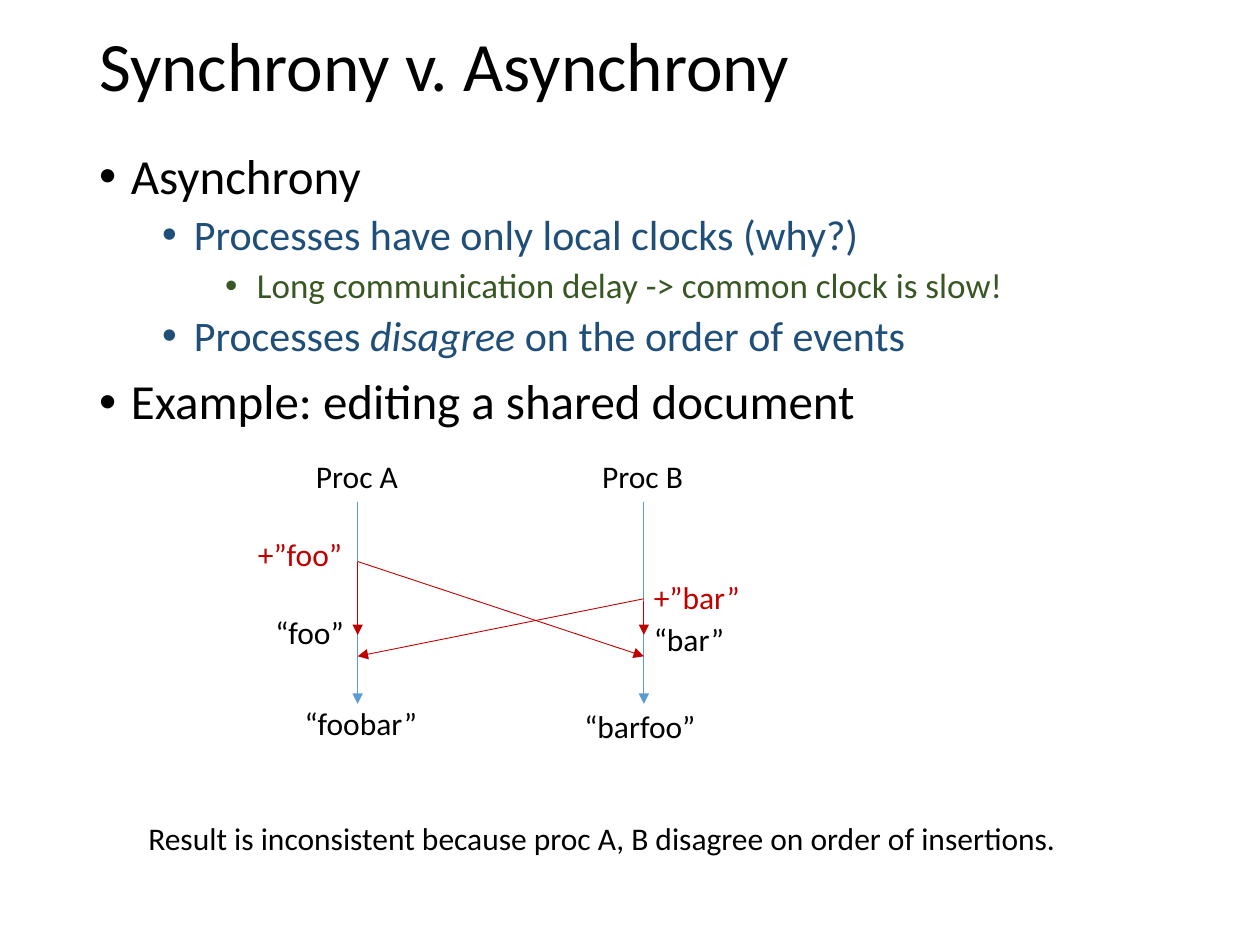
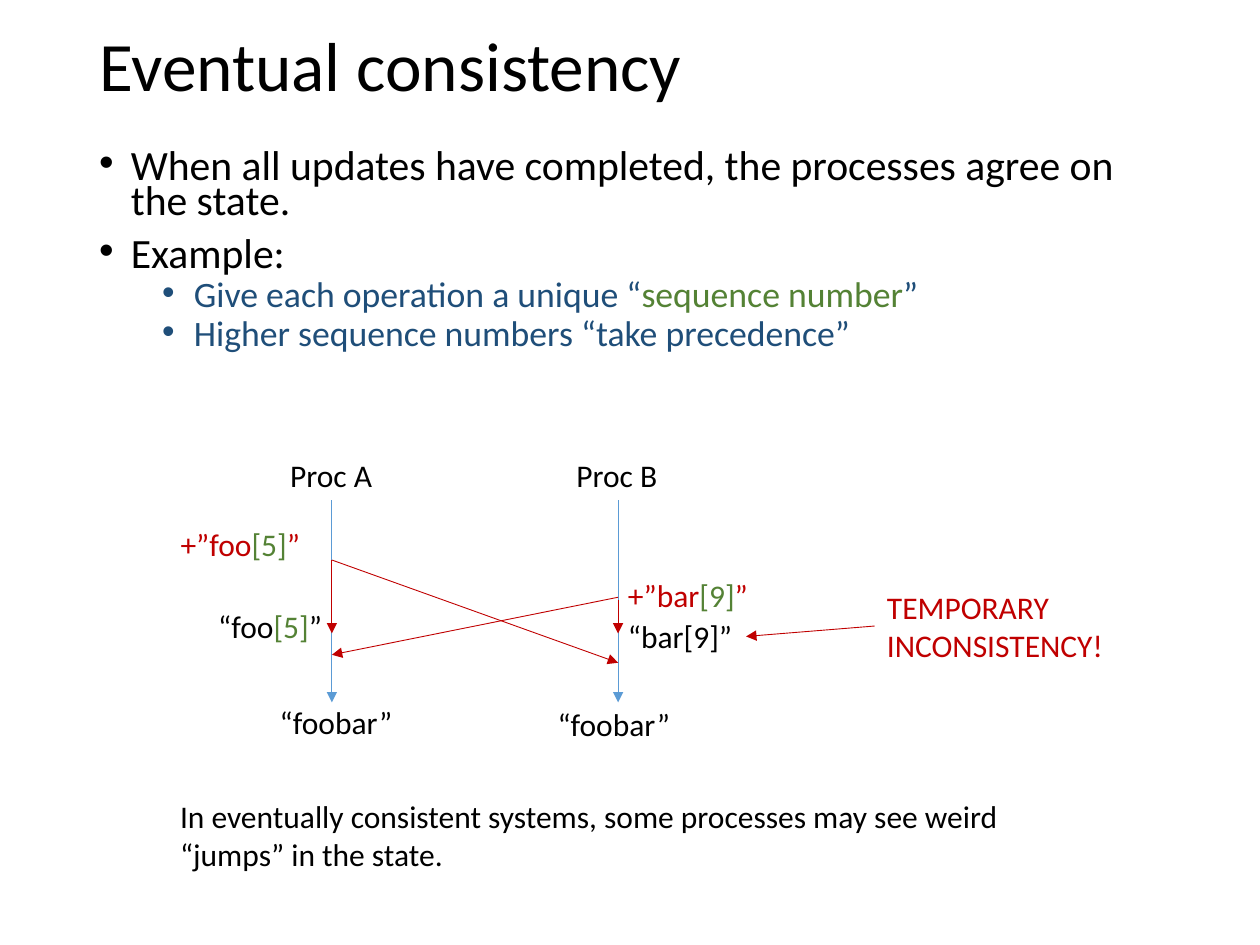
"""Builds two slides on asynchrony and eventual consistency."""
from dataclasses import dataclass
from typing import NamedTuple

from lxml import etree
from pptx import Presentation
from pptx.dml.color import RGBColor
from pptx.enum.shapes import MSO_CONNECTOR
from pptx.enum.text import MSO_ANCHOR, MSO_AUTO_SIZE
from pptx.oxml.ns import qn
from pptx.slide import Slide
from pptx.text.text import TextFrame, _Paragraph
from pptx.util import Cm, Pt

STRAIGHT = MSO_CONNECTOR.STRAIGHT
MIDDLE, TOP = MSO_ANCHOR.MIDDLE, MSO_ANCHOR.TOP
GROW, FIXED = MSO_AUTO_SIZE.SHAPE_TO_FIT_TEXT, MSO_AUTO_SIZE.NONE


@dataclass(frozen=True)
class Theme:
    font: str = "Calibri"
    ink: RGBColor = RGBColor(0x00, 0x00, 0x00)
    blue: RGBColor = RGBColor(0x1F, 0x4E, 0x79)
    dark_green: RGBColor = RGBColor(0x38, 0x57, 0x23)
    green: RGBColor = RGBColor(0x54, 0x82, 0x35)
    red: RGBColor = RGBColor(0xC0, 0x00, 0x00)
    lifeline: RGBColor = RGBColor(0x5B, 0x9B, 0xD5)
    title_size: float = 39.6
    label_size: float = 18
    bullet_sizes: tuple[float, ...] = (28, 24, 20)
    line_width: float = 0.5


THEME = Theme()
LEVEL_COLORS = (THEME.ink, THEME.blue, THEME.dark_green)
LEFT, TEXT_WIDTH = 1.75, 21.9
PROCESS_GAP = 5.77
LIFELINE_LENGTH = 4.08
FOO_SENT, BAR_SENT, LOCAL_DONE, BAR_ARRIVES = 1.21, 1.96, 2.69, 3.12
LABEL_HEIGHT = 1.02


class Run(NamedTuple):
    text: str
    color: RGBColor | None = None
    italic: bool = False


class Bullet(NamedTuple):
    level: int
    runs: list[Run]


class Box(NamedTuple):
    left: float
    top: float
    width: float
    height: float = LABEL_HEIGHT


class Label(NamedTuple):
    lines: list[list[Run]]
    box: Box
    color: RGBColor = THEME.ink


class Arrow(NamedTuple):
    start: tuple[float, float]
    end: tuple[float, float]
    color: RGBColor = THEME.red


def add_frame(slide: Slide, box: Box, **formats: object) -> TextFrame:
    """Add a text box and apply the frame formats."""
    frame = slide.shapes.add_textbox(*map(Cm, box)).text_frame
    for name, value in formats.items():
        setattr(frame, name, value)
    return frame


def write_runs(paragraph: _Paragraph, runs: list[Run], size: float, color: RGBColor) -> None:
    """Write runs, using the given colour where a run has none."""
    for part in runs:
        run = paragraph.add_run()
        run.text = part.text
        formats = {"name": THEME.font, "size": Pt(size), "italic": part.italic}
        for name, value in formats.items():
            setattr(run.font, name, value)
        run.font.color.rgb = part.color or color


def next_paragraph(frame: TextFrame, index: int) -> _Paragraph:
    """Return the first paragraph or append another."""
    return frame.add_paragraph() if index else frame.paragraphs[0]


def add_title(slide: Slide, title: str) -> None:
    """Add the slide title."""
    frame = add_frame(slide, Box(LEFT, 0.46, TEXT_WIDTH, 1.85),
                      word_wrap=True, auto_size=FIXED, vertical_anchor=MIDDLE)
    paragraph = frame.paragraphs[0]
    paragraph.line_spacing = 0.9
    write_runs(paragraph, [Run(title)], THEME.title_size, THEME.ink)


def add_bullets(slide: Slide, bullets: list[Bullet], height: float,
                scale: float, spacing: float) -> None:
    """Add the nested bullet list."""
    frame = add_frame(slide, Box(LEFT, 2.95, TEXT_WIDTH, height),
                      word_wrap=True, auto_size=FIXED, vertical_anchor=TOP)
    for index, (level, runs) in enumerate(bullets):
        paragraph = next_paragraph(frame, index)
        formats = {"level": level, "line_spacing": spacing,
                   "space_before": Pt(5 if level else 10)}
        for name, value in formats.items():
            setattr(paragraph, name, value)
        properties = paragraph._p.get_or_add_pPr()
        properties.set("marL", str(Cm(0.64 + 1.27 * level)))
        properties.set("indent", str(-Cm(0.64)))
        etree.SubElement(properties, qn("a:buFont"), typeface="Arial")
        etree.SubElement(properties, qn("a:buChar"), char="•")
        size = round(THEME.bullet_sizes[level] * scale, 1)
        write_runs(paragraph, runs, size, LEVEL_COLORS[level])


def add_label(slide: Slide, label: Label, wrap: bool = False) -> None:
    """Add a label, one paragraph for each line."""
    frame = add_frame(slide, label.box, word_wrap=wrap, auto_size=GROW)
    for index, runs in enumerate(label.lines):
        write_runs(next_paragraph(frame, index), runs, THEME.label_size, label.color)


def add_arrow(slide: Slide, arrow: Arrow) -> None:
    """Add a thin line with a triangle at its end."""
    line = slide.shapes.add_connector(STRAIGHT, *map(Cm, (*arrow.start, *arrow.end)))
    line.line.color.rgb = arrow.color
    line.line.width = Pt(THEME.line_width)
    etree.SubElement(line.line._get_or_add_ln(), qn("a:tailEnd"), type="triangle")
    etree.SubElement(line._element.spPr, qn("a:effectLst"))


def add_exchange(slide: Slide, left: float, top: float, foo_arrives: float,
                 a_labels: list[Label], b_labels: list[Label]) -> None:
    """Draw two process lifelines, their messages and their labels."""
    a, b = left, left + PROCESS_GAP
    for x, name, labels in ((a, "Proc A", a_labels), (b, "Proc B", b_labels)):
        heading = Label([[Run(name)]], Box(-1.09, -LABEL_HEIGHT, 2.18))
        for label in (heading, *labels):
            box = label.box._replace(left=x + label.box.left, top=top + label.box.top)
            add_label(slide, label._replace(box=box))
        add_arrow(slide, Arrow((x, top), (x, top + LIFELINE_LENGTH), THEME.lifeline))
    messages = (
        (a, FOO_SENT, b, foo_arrives),
        (a, FOO_SENT, a, LOCAL_DONE),
        (b, BAR_SENT, a, BAR_ARRIVES),
        (b, BAR_SENT + 0.05, b, LOCAL_DONE),
    )
    for sender, sent, receiver, arrives in messages:
        add_arrow(slide, Arrow((sender, top + sent), (receiver, top + arrives)))


def numbered(word: str, number: int) -> list[Run]:
    """Return a quoted word with a green sequence number."""
    return [Run(word), Run(f"[{number}]", THEME.green), Run("”")]


def build_asynchrony(slide: Slide) -> None:
    """Build the slide that shows inconsistent results."""
    add_title(slide, "Synchrony v. Asynchrony")
    add_bullets(slide, [
        Bullet(0, [Run("Asynchrony")]),
        Bullet(1, [Run("Processes have only local clocks (why?)")]),
        Bullet(2, [Run("Long communication delay -> common clock is slow!")]),
        Bullet(1, [Run("Processes "), Run("disagree", italic=True),
                   Run(" on the order of events")]),
        Bullet(0, [Run("Example: editing a shared document")]),
    ], height=6.15, scale=1, spacing=0.9)
    add_exchange(slide, 7.21, 10.11, 3.12, [
        Label([[Run("+”foo”")]], Box(-2.26, 0.56, 2.21), THEME.red),
        Label([[Run("“foo”")]], Box(-1.91, 2.13, 1.91)),
        Label([[Run("“foobar”")]], Box(-1.32, 3.96, 2.79)),
    ], [
        Label([[Run("+”bar”")]], Box(-0.05, 1.42, 2.26), THEME.red),
        Label([[Run("“bar”")]], Box(-0.05, 2.26, 1.96)),
        Label([[Run("“barfoo”")]], Box(-1.45, 4.01, 2.77)),
    ])
    conclusion = "Result is inconsistent because proc A, B disagree on order of insertions."
    add_label(slide, Label([[Run(conclusion)]], Box(2.74, 16.38, 18.87)))


def build_consistency(slide: Slide) -> None:
    """Build the slide that shows results converging."""
    add_title(slide, "Eventual consistency")
    add_bullets(slide, [
        Bullet(0, [Run("When all updates have completed, the processes agree on the state.")]),
        Bullet(0, [Run("Example:")]),
        Bullet(1, [Run("Give each operation a unique “"),
                   Run("sequence number", THEME.green), Run("”")]),
        Bullet(1, [Run("Higher sequence numbers “take precedence”")]),
    ], height=4.5, scale=0.85, spacing=0.7)
    add_exchange(slide, 6.69, 10.08, 3.28, [
        Label([numbered("+”foo", 5)], Box(-3.3, 0.38, 2.95), THEME.red),
        Label([numbered("“foo", 5)], Box(-2.54, 2.03, 2.62)),
        Label([[Run("“foobar”")]], Box(-1.3, 3.96, 2.79)),
    ], [
        Label([numbered("+”bar", 9)], Box(-0.05, 1.4, 2.95), THEME.red),
        Label([[Run("“bar[9]”")]], Box(-0.05, 2.24, 2.64)),
        Label([[Run("“foobar”")]], Box(-1.47, 4.01, 2.79)),
    ])
    add_label(slide, Label([[Run("TEMPORARY")], [Run("INCONSISTENCY!")]],
                           Box(17.63, 11.73, 4.9, 1.8), THEME.red))
    add_arrow(slide, Arrow((17.63, 12.62), (15.04, 12.83)))
    conclusion = ("In eventually consistent systems, some processes may see weird "
                  "“jumps” in the state.")
    add_label(slide, Label([[Run(conclusion)]], Box(3.38, 15.95, 18.39, 1.8)), wrap=True)


def main() -> None:
    """Build and save the presentation."""
    deck = Presentation()
    deck.slide_width, deck.slide_height = Cm(25.4), Cm(19.05)
    blank = deck.slide_layouts[6]
    for build in (build_asynchrony, build_consistency):
        build(deck.slides.add_slide(blank))
    deck.save("out.pptx")


if __name__ == "__main__":
    main()
